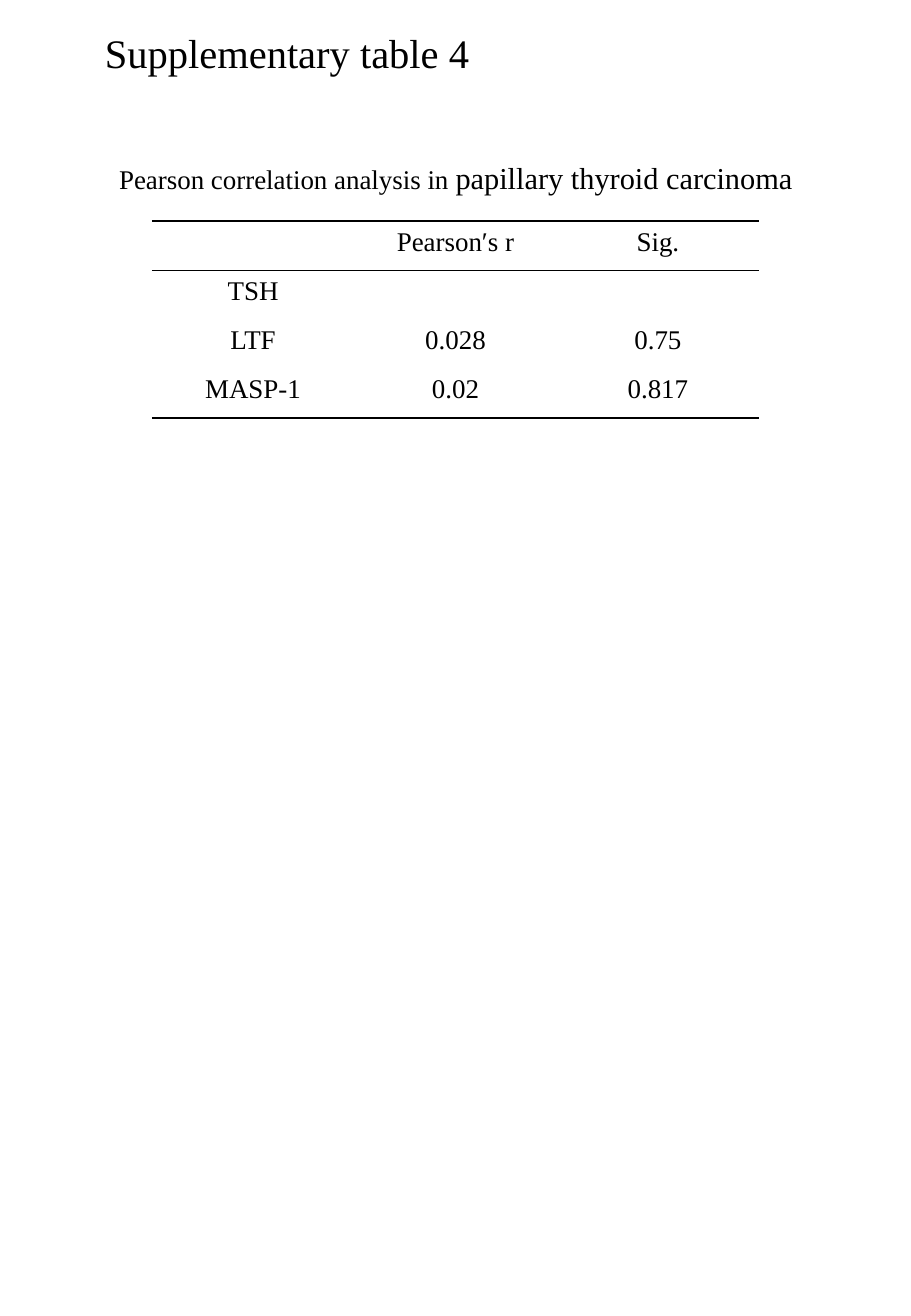
import pptx
import pptx.util
import pptx.dml.color
import pptx.enum.text
import pptx.oxml
import pptx.oxml.ns

Pt = pptx.util.Pt
ALIGN = pptx.enum.text.PP_ALIGN
THEME = {
    "font": "Times New Roman",
    "ink": "000000",
    "title": 24,
    "caption": 18,
    "body": 16,
    "heavy rule": 1.5,
    "light rule": 0.75,
}


def add_span(para, text, size):
    span = para.add_run()
    span.text = text
    formats = {"name": THEME["font"], "size": Pt(THEME[size]), "bold": False}
    for key, value in formats.items():
        setattr(span.font, key, value)
    span.font.color.rgb = pptx.dml.color.RGBColor.from_string(THEME["ink"])


def set_borders(cell, rules):
    properties = cell._tc.get_or_add_tcPr()
    for index, side in enumerate(("lnL", "lnR", "lnT", "lnB")):
        rule = rules.get(side)
        width, paint = "", "<a:noFill/>"
        if rule:
            width = f' w="{Pt(THEME[rule])}"'
            paint = f'<a:solidFill><a:srgbClr val="{THEME["ink"]}"/></a:solidFill>'
        namespace = pptx.oxml.ns.nsdecls("a")
        line = pptx.oxml.parse_xml(f"<a:{side} {namespace}{width}>{paint}</a:{side}>")
        properties.insert(index, line)


# Page
deck = pptx.Presentation()
deck.slide_width, deck.slide_height = Pt(540), Pt(780)
page = deck.slides.add_slide(deck.slide_layouts.get_by_name("Title Only"))

# Title and caption
title = page.shapes.title
caption = page.shapes.add_textbox(Pt(63.5), Pt(91), Pt(425), Pt(29))
headings = [
    (title, (55, 13, 282, 36), [("Supplementary table 4", "title")]),
    (caption, (63.5, 91, 425, 29), [
        ("Pearson correlation analysis in ", "body"),
        ("papillary thyroid carcinoma", "caption"),
    ]),
]
for box, place, spans in headings:
    for key, value in zip(("left", "top", "width", "height"), place):
        setattr(box, key, Pt(value))
    formats = {
        "word_wrap": True,
        "auto_size": pptx.enum.text.MSO_AUTO_SIZE.NONE,
        "vertical_anchor": pptx.enum.text.MSO_ANCHOR.TOP,
    }
    for key, value in formats.items():
        setattr(box.text_frame, key, value)
    para = box.text_frame.paragraphs[0]
    para.alignment = ALIGN.LEFT
    for text, size in spans:
        add_span(para, text, size)

# Correlation table
rows = [
    ("", "Pearson′s r", "Sig."),
    ("TSH", "", ""),
    ("LTF", "0.028", "0.75"),
    ("MASP-1", "0.02", "0.817"),
]
rules = {
    0: {"lnT": "heavy rule", "lnB": "light rule"},
    1: {"lnT": "light rule"},
    len(rows) - 1: {"lnB": "heavy rule"},
}
frame = page.shapes.add_table(len(rows), 3, Pt(90), Pt(131), Pt(360), Pt(116.8))
table = frame.table
for key in ("first_row", "horz_banding"):
    setattr(table, key, False)
for row_index, texts in enumerate(rows):
    table.rows[row_index].height = Pt(29.2)
    for column_index, text in enumerate(texts):
        cell = table.cell(row_index, column_index)
        cell.fill.background()
        set_borders(cell, rules.get(row_index, {}))
        if text:
            para = cell.text_frame.paragraphs[0]
            para.alignment = ALIGN.CENTER
            add_span(para, text, "body")

deck.save("out.pptx")
